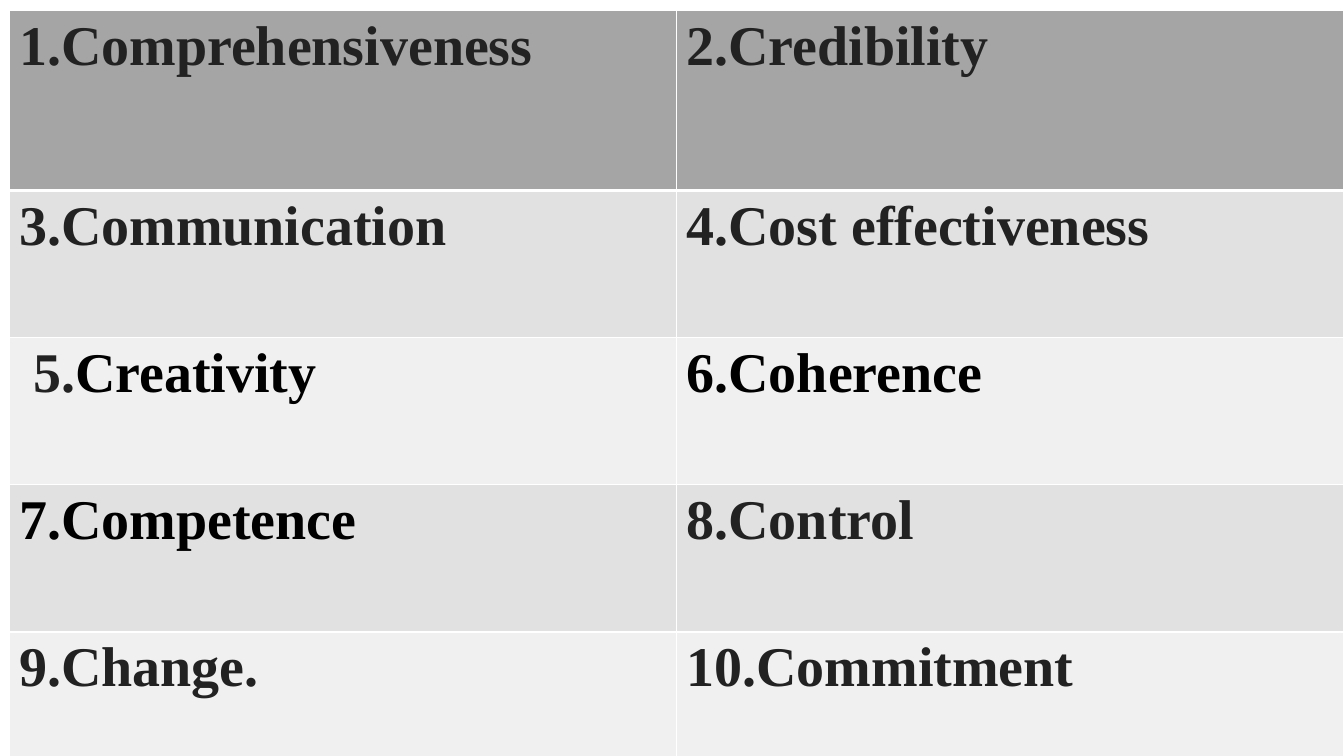
"""Build a slide with a two-column table of the ten Cs."""
from dataclasses import dataclass

from lxml import etree
from pptx import Presentation
from pptx import util as u
from pptx.dml import color
from pptx.oxml import ns


@dataclass(frozen=True)
class Theme:
    font: str = "Times New Roman"
    size: int = 40
    dark: str = "222222"
    black: str = "000000"
    border: str = "FFFFFF"
    header: str = "A5A5A5"
    bands: tuple = ("F0F0F0", "E1E1E1")
    thin: int = 1
    thick: int = 3


theme = Theme()


def add_border(cell, side, points):
    """Draw one solid edge of a table cell."""
    props = cell._tc.get_or_add_tcPr()
    line = etree.SubElement(props, ns.qn(f"a:ln{side}"), w=str(u.Pt(points)))
    fill = etree.SubElement(line, ns.qn("a:solidFill"))
    etree.SubElement(fill, ns.qn("a:srgbClr"), val=theme.border)


entries = [
    [[("1.Comprehensiveness", theme.dark)], [("2.Credibility", theme.dark)]],
    [[("3.Communication", theme.dark)], [("4.Cost effectiveness", theme.dark)]],
    [[(" 5.", theme.dark), ("Creativity", theme.black)], [("6.Coherence", theme.black)]],
    [[("7.Competence", theme.black)], [("8.Control", theme.dark)]],
    [[("9.Change.", theme.dark)], [("10.Commitment", theme.dark)]],
]
row_heights = [1.79, 1.46, 1.46, 1.46, 1.32]
column_width = 6.62

deck = Presentation()
deck.slide_width, deck.slide_height = u.Inches(13.33), u.Inches(7.5)
page = deck.slides.add_slide(deck.slide_layouts[6])

frame = page.shapes.add_table(
    len(entries), 2, u.Inches(0.09), u.Inches(0.1),
    u.Inches(2 * column_width), u.Inches(sum(row_heights)),
)
table = frame.table
for column in table.columns:
    column.width = u.Inches(column_width)

for row_index, (row_entries, height) in enumerate(zip(entries, row_heights)):
    table.rows[row_index].height = u.Inches(height)
    for column_index, spans in enumerate(row_entries):
        cell = table.cell(row_index, column_index)
        edges = {
            "L": theme.thin,
            "R": theme.thin,
            "T": theme.thick if row_index == 1 else theme.thin,
            "B": theme.thick if row_index == 0 else theme.thin,
        }
        for side, points in edges.items():
            add_border(cell, side, points)
        cell.fill.solid()
        shade = theme.bands[row_index % 2] if row_index else theme.header
        cell.fill.fore_color.rgb = color.RGBColor.from_string(shade)

        para = cell.text_frame.paragraphs[0]
        for words, ink in spans:
            span = para.add_run()
            span.text = words
            formats = {"name": theme.font, "size": u.Pt(theme.size), "bold": True}
            for name, value in formats.items():
                setattr(span.font, name, value)
            span.font.color.rgb = color.RGBColor.from_string(ink)

deck.save("out.pptx")
